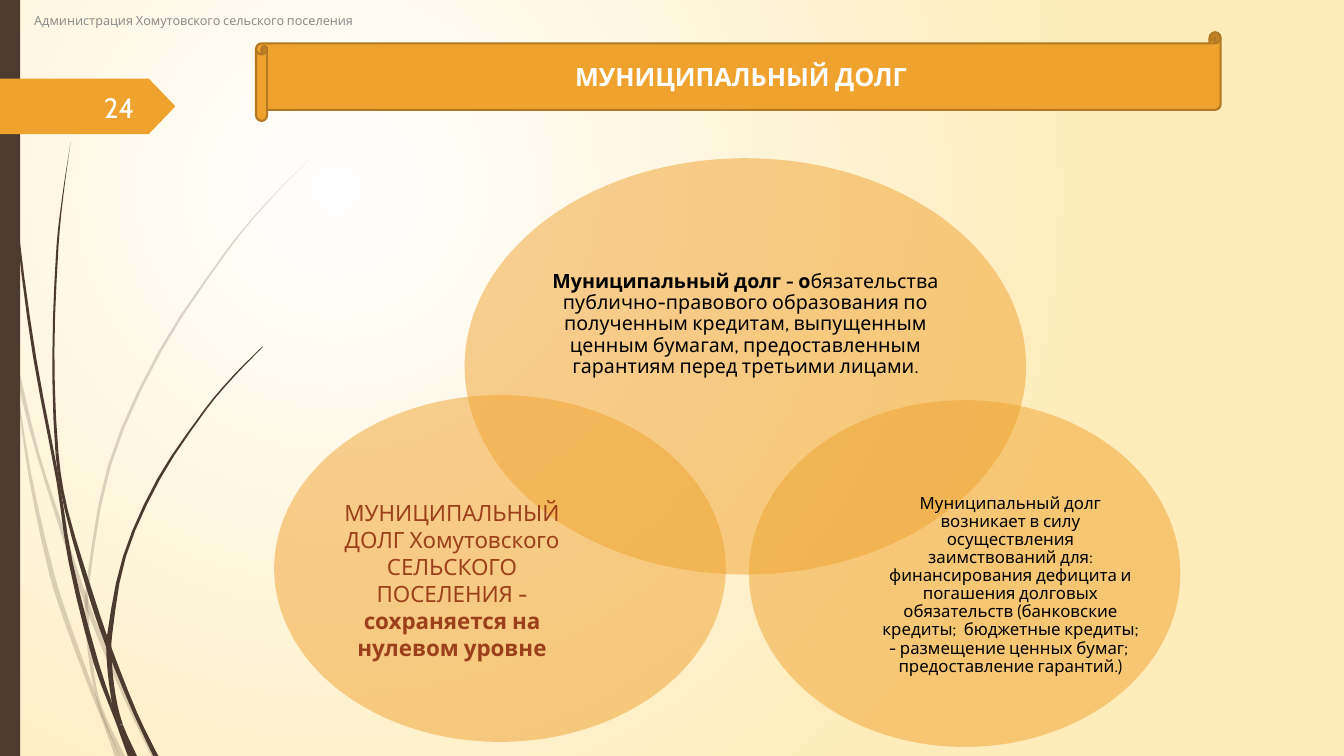
from lxml.etree import SubElement
from pptx import Presentation
from pptx.dml.color import RGBColor
from pptx.enum.shapes import MSO_SHAPE
from pptx.enum.text import MSO_ANCHOR, PP_ALIGN
from pptx.oxml.ns import qn
from pptx.util import Inches, Pt

FONT = "Cabin"
ORANGE = RGBColor(0xF0, 0xA2, 0x2E)
ORANGE_DARK = RGBColor(0xB2, 0x78, 0x22)
BROWN = RGBColor(0x4E, 0x3B, 0x30)
RUST = RGBColor(0x9C, 0x3F, 0x1A)
GREY = RGBColor(0x8C, 0x8C, 0x8C)
BLACK = RGBColor(0, 0, 0)
WHITE = RGBColor(0xFF, 0xFF, 0xFF)
CREAM = RGBColor(0xFE, 0xEC, 0xBA)

TITLE = "МУНИЦИПАЛЬНЫЙ ДОЛГ"
HEADER = "Администрация Хомутовского сельского поселения"
PAGE = "24"

# ellipse box, text box, size, colour, line spacing, runs (text, bold)
CIRCLES = [
    ((4.61, 1.57, 5.57, 4.13), (5.35, 2.29, 4.09, 1.86), 14, BLACK, 0.9, [
        ("Муниципальный долг - о", True),
        ("бязательства публично-правового образования по полученным кредитам, "
         "выпущенным ценным бумагам, предоставленным гарантиям перед третьими лицами.", False)]),
    ((7.43, 3.97, 4.28, 3.44), (8.74, 4.86, 2.57, 1.89), 12, BLACK, 0.9, [
        ("Муниципальный долг возникает в силу осуществления заимствований для: "
         "финансирования дефицита и погашения долговых обязательств (банковские кредиты;  "
         "бюджетные кредиты; - размещение ценных бумаг;  предоставление гарантий.)", False)]),
    ((2.72, 3.92, 4.48, 3.44), (3.14, 4.81, 2.69, 1.89), 16, RUST, 1.0, [
        ("МУНИЦИПАЛЬНЫЙ ДОЛГ Хомутовского СЕЛЬСКОГО ПОСЕЛЕНИЯ - ", False),
        ("сохраняется на нулевом уровне", True)]),
]

# grass stems: heights where a stem is jointed, then rows (y, left edge, right edge)
PALE_STEMS = [
    ((3.5, 7.14), [
        (2.82, 0, 0), (2.99, 0, 0.04), (3.5, 0.11, 0.12), (4.7, 0.28, 0.31), (5.7, 0.49, 0.54),
        (6.2, 0.65, 0.7), (6.92, 0.92, 0.96), (7.14, 1.01, 1.04), (7.5, 1.14, 1.19)]),
    ((6.08,), [
        (3.45, 0.14, 0.14), (3.76, 0.17, 0.21), (4.5, 0.36, 0.39), (5.21, 0.58, 0.62),
        (6.08, 0.87, 0.92), (6.93, 1.23, 1.27), (7.5, 1.5, 1.55)]),
    ((5.84, 6.1, 7.11), [
        (1.53, 3.12, 3.12), (1.97, 2.68, 2.69), (2.45, 2.27, 2.29), (3.49, 1.57, 1.6),
        (4.62, 1.07, 1.1), (5.84, 0.85, 0.88), (6.1, 0.84, 0.88), (6.46, 0.87, 0.91),
        (6.83, 0.93, 0.96), (7.11, 1.01, 1.05), (7.5, 1.19, 1.24)]),
]
DARK_STEMS = [
    ((4.77, 7.22), [
        (0, 0.03, 0.04), (1.1, 0.07, 0.08), (2.33, 0.17, 0.19), (3.55, 0.33, 0.36),
        (4.77, 0.56, 0.59), (5.57, 0.68, 0.72), (6.58, 0.93, 0.98), (7.22, 1.17, 1.2),
        (7.5, 1.27, 1.31)]),
    ((4.49, 5.05, 6.41), [
        (1.41, 0.7, 0.7), (1.93, 0.62, 0.63), (2.45, 0.56, 0.58), (3.49, 0.52, 0.54),
        (4.49, 0.55, 0.58), (5.05, 0.64, 0.67), (5.91, 0.88, 0.93), (6.41, 1.05, 1.1),
        (7.07, 1.32, 1.36), (7.5, 1.52, 1.57)]),
    ((6.32, 6.56, 7.19), [
        (3.44, 2.6, 2.61), (3.74, 2.3, 2.32), (4.06, 2.03, 2.05), (4.75, 1.56, 1.59),
        (5.52, 1.22, 1.25), (6.32, 1.06, 1.11), (6.56, 1.06, 1.11), (6.91, 1.1, 1.15),
        (7.19, 1.16, 1.22), (7.5, 1.27, 1.36)]),
]
STEPS = 3
UNITS = 1000  # freeform units per inch


def paint(sp, color, alpha=None):
    sp.shadow.inherit = False
    sp.fill.solid()
    sp.fill.fore_color.rgb = color
    sp.line.fill.background()
    if alpha is not None:
        clr = sp.fill._xPr.find(qn("a:solidFill"))[0]
        SubElement(clr, qn("a:alpha"), val=str(alpha * 1000))


def add_shape(kind, box, color, alpha=None):
    sp = s.shapes.add_shape(kind, *map(Inches, box))
    paint(sp, color, alpha)
    return sp


def write(sp, runs, size, color, align=PP_ALIGN.LEFT, spacing=1.0, inset=None):
    tf = sp.text_frame
    tf.word_wrap = True
    tf.vertical_anchor = MSO_ANCHOR.MIDDLE
    if inset is not None:
        tf.margin_left = tf.margin_right = tf.margin_top = tf.margin_bottom = Inches(inset)
    p = tf.paragraphs[0]
    p.alignment, p.line_spacing = align, spacing
    p.font.name, p.font.size, p.font.color.rgb = FONT, Pt(size), color
    for text, bold in runs:
        r = p.add_run()
        r.text, r.font.bold = text, bold


def add_text(box, *args, **kwargs):
    write(s.shapes.add_textbox(*map(Inches, box)), *args, **kwargs)


def smooth(points):
    """Sample a Hermite curve through points of rising y, with x a function of y."""
    last = len(points) - 1
    slopes = []
    for i in range(last + 1):
        (x0, y0), (x1, y1) = points[max(i - 1, 0)], points[min(i + 1, last)]
        slopes.append((x1 - x0) / (y1 - y0))
    curve = [points[0]]
    for i in range(last):
        (x0, y0), (x1, y1) = points[i:i + 2]
        h = y1 - y0
        for k in range(1, STEPS + 1):
            t = k / STEPS
            x = ((2 * t**3 - 3 * t**2 + 1) * x0 + (3 * t**2 - 2 * t**3) * x1
                 + (t**3 - 2 * t**2 + t) * h * slopes[i] + (t**3 - t**2) * h * slopes[i + 1])
            curve.append((x, y0 + h * t))
    return curve


def add_stem(joints, rows, alpha=None):
    left = smooth([(x, y) for y, x, _ in rows])
    right = smooth([(x, y) for y, _, x in rows])
    heights = [row[0] for row in rows]
    cuts = [0, *(heights.index(y) * STEPS for y in joints), len(left) - 1]
    for a, b in zip(cuts, cuts[1:]):
        outline = left[a:b + 1] + right[a:b + 1][::-1]
        points = [(round(x * UNITS), round(y * UNITS)) for x, y in outline]
        builder = s.shapes.build_freeform(*points[0], scale=Inches(1) / UNITS)
        builder.add_line_segments(points[1:], close=True)
        paint(builder.convert_to_shape(), BROWN, alpha)


prs = Presentation()
prs.slide_width, prs.slide_height = Inches(40 / 3), Inches(7.5)
s = prs.slides.add_slide(prs.slide_layouts[6])

fill = s.background.fill
fill.gradient()
for stop, color in zip(fill.gradient_stops, (WHITE, CREAM)):
    stop.color.rgb = color
grad = s._element.find(".//" + qn("a:gradFill"))
grad.remove(grad.find(qn("a:lin")))
circle = SubElement(grad, qn("a:path"), {"path": "circle"})
SubElement(circle, qn("a:fillToRect"), l="50000", t="50000", r="100000", b="100000")

for joints, rows in PALE_STEMS:
    add_stem(joints, rows, 20)
for joints, rows in DARK_STEMS:
    add_stem(joints, rows)
add_shape(MSO_SHAPE.RECTANGLE, (0, 0, 0.2, 7.5), BROWN)
page_tag = add_shape(MSO_SHAPE.PENTAGON, (0, 0.78, 1.74, 0.55), ORANGE)
page_tag.adjustments[0] = 0.48
add_text((0.24, 0, 8.33, 0.4), [(HEADER, False)], 9, GREY)
add_text((0.58, 0.86, 0.85, 0.4), [(PAGE, False)], 20, WHITE, PP_ALIGN.RIGHT)

for ellipse, box, size, color, spacing, runs in CIRCLES:
    add_shape(MSO_SHAPE.OVAL, ellipse, ORANGE, 50)
    add_text(box, runs, size, color, PP_ALIGN.CENTER, spacing, inset=0)

scroll = add_shape(MSO_SHAPE.HORIZONTAL_SCROLL, (2.54, 0.32, 9.57, 0.88), ORANGE)
scroll.line.color.rgb, scroll.line.width = ORANGE_DARK, Pt(1.5)
write(scroll, [(TITLE, True)], 18, WHITE, PP_ALIGN.CENTER)

prs.save("out.pptx")
